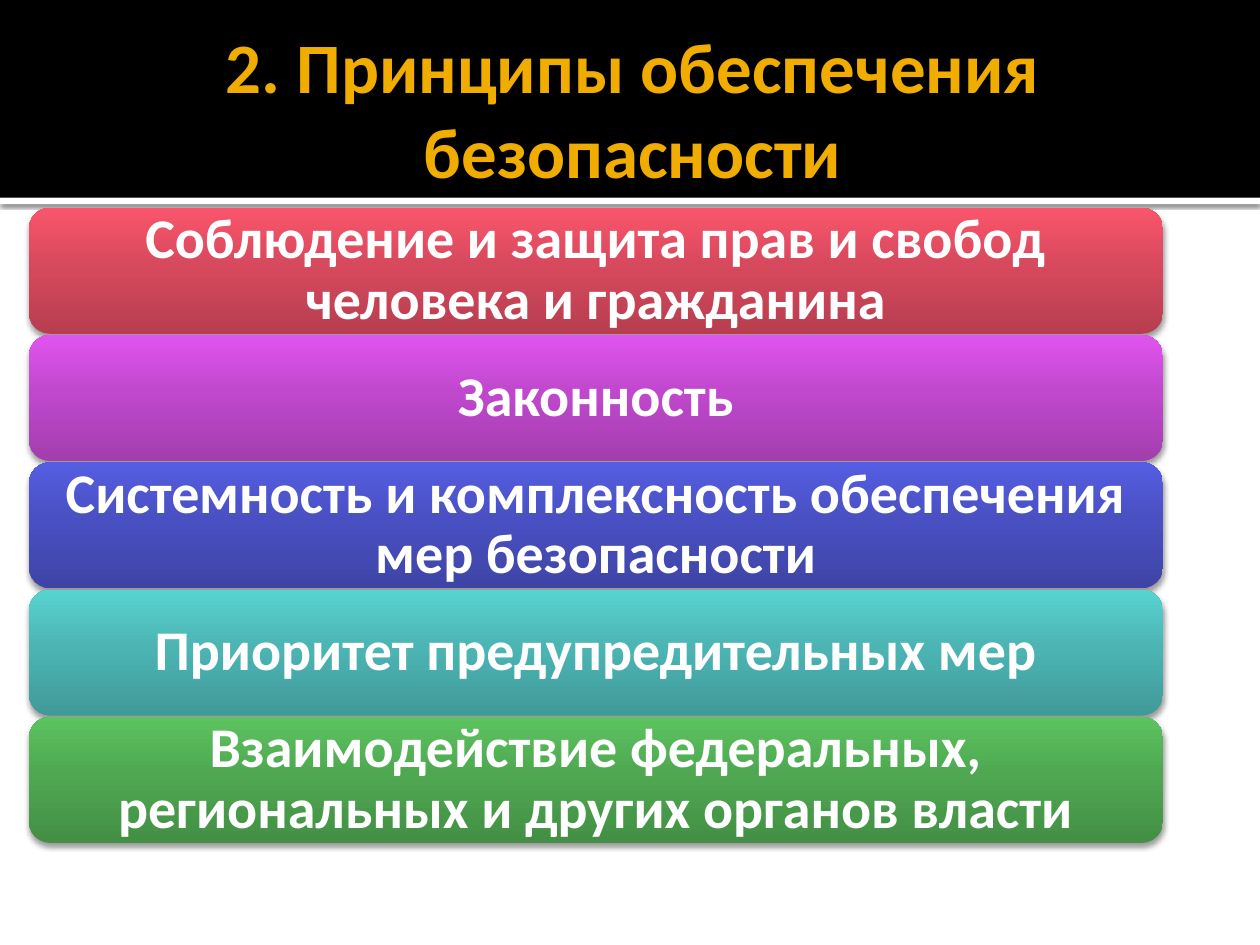
from copy import deepcopy

from lxml.etree import SubElement
from pptx import Presentation
from pptx.dml.color import RGBColor
from pptx.enum.shapes import MSO_SHAPE
from pptx.enum.text import MSO_ANCHOR, PP_ALIGN
from pptx.oxml.ns import qn
from pptx.util import Inches, Pt

WHITE = RGBColor(0xFF, 0xFF, 0xFF)
BLACK = RGBColor(0x00, 0x00, 0x00)
GOLD = RGBColor(0xF0, 0xAD, 0x00)
FONT = "Calibri"

TITLE = "2. Принципы обеспечения безопасности"
# Text, then gradient colours from the bottom edge to the top edge
PRINCIPLES = [
    ("Соблюдение и защита прав и свобод человека и гражданина",
     ("B73E4F", "D7495D", "FA556C")),
    ("Законность",
     ("A33EAE", "C048CD", "E054EF")),
    ("Системность и комплексность обеспечения мер безопасности",
     ("3E44A5", "4950C2", "555DE2")),
    ("Приоритет предупредительных мер",
     ("409A99", "4CB5B4", "58D3D1")),
    ("Взаимодействие федеральных, региональных и других органов власти",
     ("438F45", "4FA851", "5CC35F")),
]
GRADIENT_POSITIONS = (0, 0.55, 1)

BAND_HEIGHT, STRIPE_HEIGHT = 1.57, 0.05
BAR_LEFT, BAR_TOP, BAR_WIDTH, BAR_HEIGHT = 0.23, 1.65, 9, 1
BAR_PITCH = 1.01


def add_block(slide, preset, left, top, width, height):
    block = slide.shapes.add_shape(
        preset, Inches(left), Inches(top), Inches(width), Inches(height))
    block.line.fill.background()
    block.shadow.inherit = False
    return block


def fill_solid(block, color):
    block.fill.solid()
    block.fill.fore_color.rgb = color


def fill_gradient(block, colors):
    block.fill.gradient()
    block.fill.gradient_angle = 90
    stop_list = next(block._element.spPr.iter(qn("a:gsLst")))
    stop_list.append(deepcopy(stop_list[0]))
    stops = block.fill.gradient_stops
    for stop, position, color in zip(stops, GRADIENT_POSITIONS, colors):
        stop.position = position
        stop.color.rgb = RGBColor.from_string(color)


def drop_shadow(block, opacity, blur, distance):
    """Cast a black shadow straight down; opacity in percent, lengths in points."""
    effects = block._element.spPr.find(qn("a:effectLst"))
    shadow = SubElement(effects, qn("a:outerShdw"), blurRad=str(Pt(blur)),
                        dist=str(Pt(distance)), dir="5400000", rotWithShape="0")
    color = SubElement(shadow, qn("a:srgbClr"), val=str(BLACK))
    SubElement(color, qn("a:alpha"), val=str(opacity * 1000))


def write(block, text, size, color, insets, line_spacing=1.0):
    frame = block.text_frame
    frame.word_wrap = True
    frame.vertical_anchor = MSO_ANCHOR.MIDDLE
    (frame.margin_left, frame.margin_top,
     frame.margin_right, frame.margin_bottom) = map(Inches, insets)
    paragraph = frame.paragraphs[0]
    paragraph.alignment = PP_ALIGN.CENTER
    paragraph.line_spacing = line_spacing
    run = paragraph.add_run()
    run.text = text
    run.font.name = FONT
    run.font.size = Pt(size)
    run.font.bold = True
    run.font.color.rgb = color


def main():
    prs = Presentation()
    prs.slide_width, prs.slide_height = Inches(10), Inches(7.5)
    slide = prs.slides.add_slide(prs.slide_layouts[6])

    stripe = add_block(slide, MSO_SHAPE.RECTANGLE, 0, BAND_HEIGHT, 10, STRIPE_HEIGHT)
    fill_solid(stripe, WHITE)
    drop_shadow(stripe, 60, 2.5, 0.8)
    band = add_block(slide, MSO_SHAPE.RECTANGLE, 0, 0, 10, BAND_HEIGHT)
    fill_solid(band, BLACK)

    title = slide.shapes.add_textbox(
        Inches(0.5), Inches(0.17), Inches(9), Inches(1.37))
    write(title, TITLE, 40.5, GOLD, (0.1, 0.05, 0.05, 0.05))

    for index, (principle, colors) in enumerate(PRINCIPLES):
        bar = add_block(slide, MSO_SHAPE.ROUNDED_RECTANGLE, BAR_LEFT,
                        BAR_TOP + index * BAR_PITCH, BAR_WIDTH, BAR_HEIGHT)
        fill_gradient(bar, colors)
        drop_shadow(bar, 38, 3.1, 2)
        write(bar, principle, 32, WHITE, (0.08,) * 4, line_spacing=0.9)

    prs.save("out.pptx")


if __name__ == "__main__":
    main()
